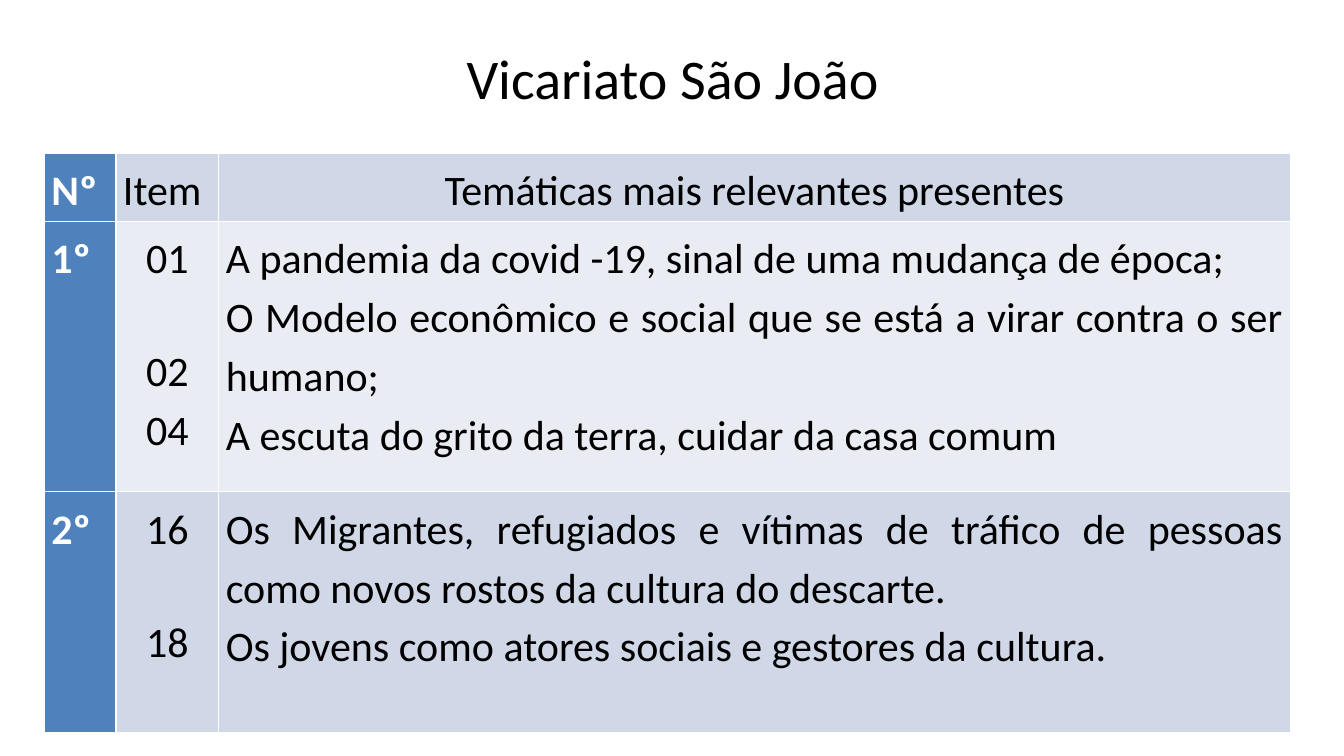
"""Builds the slide with the table of themes for Vicariato São João."""
from dataclasses import dataclass

from lxml.etree import SubElement
from pptx import Presentation
from pptx.dml.color import RGBColor
from pptx.enum.text import MSO_ANCHOR, PP_ALIGN
from pptx.oxml.ns import qn
from pptx.util import Emu, Pt

PX = 9144


@dataclass(frozen=True)
class Theme:
    font: str = "Calibri"
    title_size: int = 40
    table_size: int = 30
    line_spacing: float = 1.15
    item_gap: float = 38.6
    border_width: float = 0.96
    dark: str = "000000"
    light: str = "FFFFFF"
    accent: str = "4F81BD"
    band: str = "D0D8E7"
    pale: str = "E9ECF3"


@dataclass(frozen=True)
class Line:
    text: str
    align: PP_ALIGN = PP_ALIGN.JUSTIFY
    before: float = 0


@dataclass(frozen=True)
class Row:
    height: int
    fill: str
    cells: tuple[tuple[Line, ...], ...]


THEME = Theme()
CENTER = PP_ALIGN.CENTER
COLUMNS = (71, 102, 1063)
ROWS = (
    Row(63, THEME.band, (
        (Line("Nº"),),
        (Line("Item"),),
        (Line("Temáticas mais relevantes presentes", CENTER),),
    )),
    Row(268, THEME.pale, (
        (Line("1º"),),
        (Line("01", CENTER), Line("02", CENTER, THEME.item_gap), Line("04", CENTER)),
        (
            Line("A pandemia da covid -19, sinal de uma mudança de época;"),
            Line("O Modelo econômico e social que se está a virar contra o ser humano;"),
            Line("A escuta do grito da terra, cuidar da casa comum"),
        ),
    )),
    Row(239, THEME.band, (
        (Line("2º"),),
        (Line("16", CENTER), Line("18", CENTER, THEME.item_gap)),
        (
            Line("Os Migrantes, refugiados e vítimas de tráfico de pessoas "
                 "como novos rostos da cultura do descarte."),
            Line("Os jovens como atores sociais e gestores da cultura."),
        ),
    )),
)


def px(length: int) -> Emu:
    return Emu(length * PX)


def write(para, text: str, *, size: int, color: str, align: PP_ALIGN,
          bold: bool = False, spacing: float = 1, before: float = 0) -> None:
    para.alignment = align
    para.line_spacing = spacing
    para.space_before = Pt(before)
    span = para.add_run()
    span.text = text
    span.font.name = THEME.font
    span.font.size = Pt(size)
    span.font.bold = bold
    span.font.color.rgb = RGBColor.from_string(color)


def add_borders(cell) -> None:
    properties = cell._tc.get_or_add_tcPr()
    for side in ("lnL", "lnR", "lnT", "lnB"):
        border = SubElement(properties, qn(f"a:{side}"), w=str(int(Pt(THEME.border_width))))
        fill = SubElement(border, qn("a:solidFill"))
        SubElement(fill, qn("a:srgbClr"), val=THEME.light)


def fill_cell(cell, lines: tuple[Line, ...], fill: str, is_label: bool) -> None:
    cell.margin_left = cell.margin_right = px(7)
    cell.margin_top = cell.margin_bottom = px(5)
    add_borders(cell)
    cell.fill.solid()
    cell.fill.fore_color.rgb = RGBColor.from_string(THEME.accent if is_label else fill)
    frame = cell.text_frame
    for index, line in enumerate(lines):
        para = frame.add_paragraph() if index else frame.paragraphs[0]
        write(para, line.text, size=THEME.table_size, align=line.align, bold=is_label,
              color=THEME.light if is_label else THEME.dark,
              spacing=THEME.line_spacing, before=line.before)


def add_title(page, text: str) -> None:
    box = page.shapes.add_textbox(px(67), px(30), px(1200), px(93))
    frame = box.text_frame
    frame.word_wrap = True
    frame.vertical_anchor = MSO_ANCHOR.MIDDLE
    write(frame.paragraphs[0], text, size=THEME.title_size, color=THEME.dark, align=CENTER)


def add_themes(page) -> None:
    height = sum(row.height for row in ROWS)
    table = page.shapes.add_table(len(ROWS), len(COLUMNS), px(44), px(152),
                                  px(sum(COLUMNS)), px(height)).table
    table.first_row = table.horz_banding = False
    for column, width in zip(table.columns, COLUMNS):
        column.width = px(width)
    for index, row in enumerate(ROWS):
        table.rows[index].height = px(row.height)
        for position, lines in enumerate(row.cells):
            fill_cell(table.cell(index, position), lines, row.fill, position == 0)


def main() -> None:
    deck = Presentation()
    deck.slide_width, deck.slide_height = px(1333), px(750)
    page = deck.slides.add_slide(deck.slide_layouts[6])
    add_title(page, "Vicariato São João")
    add_themes(page)
    deck.save("out.pptx")


if __name__ == "__main__":
    main()
